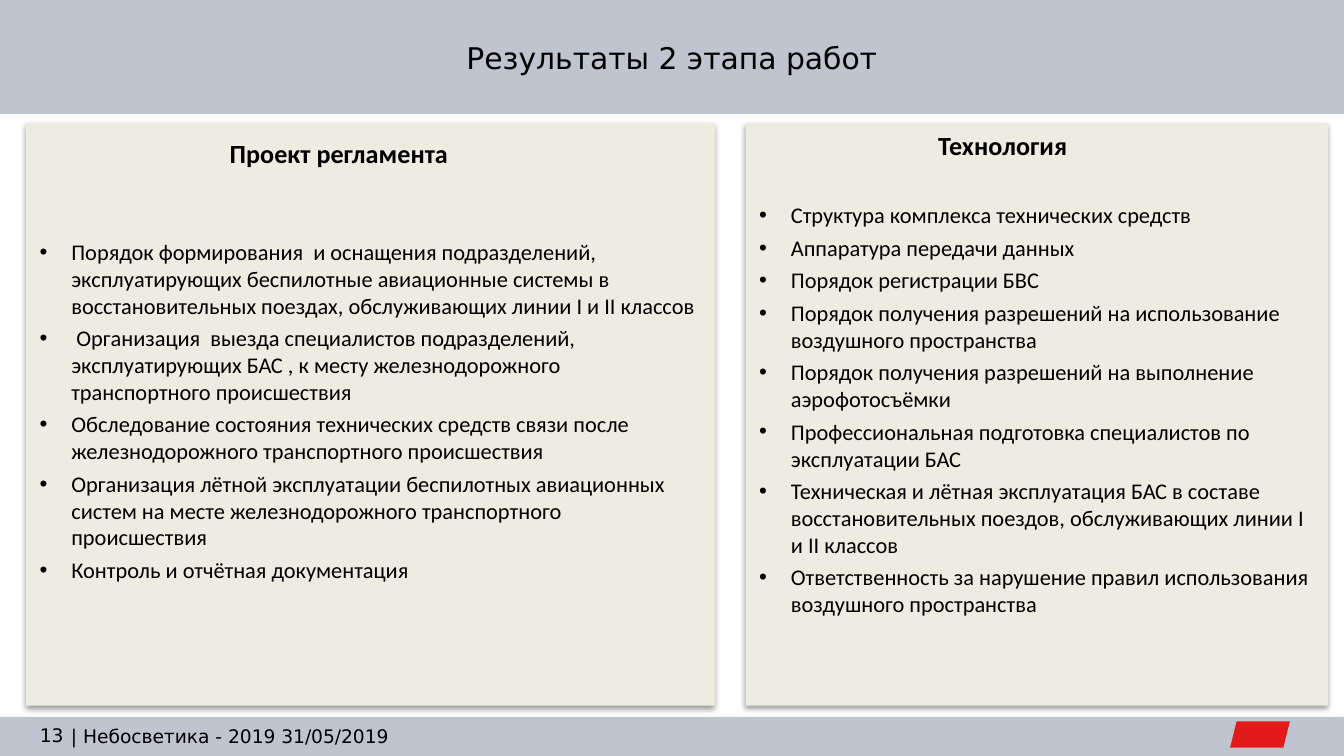
from lxml.etree import SubElement
from pptx import Presentation
from pptx.dml.color import RGBColor
from pptx.enum.shapes import MSO_SHAPE
from pptx.enum.text import MSO_ANCHOR, MSO_AUTO_SIZE, PP_ALIGN
from pptx.oxml.ns import qn
from pptx.util import Pt

COLORS = {
    "band": "BFC5CE",
    "panel": "EEECE1",
    "text": "000000",
    "logo": "E21A1A",
    "band_shadow": "808080",
    "panel_shadow": "000000",
}
SLIDE_WIDTH, SLIDE_HEIGHT = 720, 405
HEADER_FONT, BODY_FONT = "DejaVu Sans", "Calibri"
BULLET_INDENT = 17

REGULATION = [
    "Порядок формирования  и оснащения подразделений, эксплуатирующих беспилотные "
    "авиационные системы в восстановительных поездах, обслуживающих линии I и II классов",
    " Организация  выезда специалистов подразделений, эксплуатирующих БАС , "
    "к месту железнодорожного транспортного происшествия",
    "Обследование состояния технических средств связи после железнодорожного "
    "транспортного происшествия",
    "Организация лётной эксплуатации беспилотных авиационных систем на месте "
    "железнодорожного транспортного происшествия",
    "Контроль и отчётная документация",
]
TECHNOLOGY = [
    "Структура комплекса технических средств",
    "Аппаратура передачи данных",
    "Порядок регистрации БВС",
    "Порядок получения разрешений на использование воздушного пространства",
    "Порядок получения разрешений на выполнение аэрофотосъёмки",
    "Профессиональная подготовка специалистов по эксплуатации БАС",
    "Техническая и лётная эксплуатация БАС в составе восстановительных поездов, "
    "обслуживающих линии I и II классов",
    "Ответственность за нарушение правил использования воздушного пространства",
]


def color(name):
    return RGBColor.from_string(COLORS[name])


def place(shape, left, top, width, height):
    shape.left, shape.top = Pt(left), Pt(top)
    shape.width, shape.height = Pt(width), Pt(height)


def fill_shape(shape, name):
    shape.fill.solid()
    shape.fill.fore_color.rgb = color(name)
    shape.line.fill.background()


def format_runs(paragraph, font, size, bold=False):
    for run in paragraph.runs:
        run.font.name = font
        run.font.size = Pt(size)
        run.font.bold = bold
        run.font.color.rgb = color("text")


def add_shadow(shape, name, opacity, blur, distance):
    """Give the shape a soft shadow that falls straight down."""
    shape.shadow.inherit = False
    effects = shape._element.spPr.find(qn("a:effectLst"))
    shadow = SubElement(effects, qn("a:outerShdw"), blurRad=str(Pt(blur)),
                        dist=str(Pt(distance)), dir="5400000", rotWithShape="0")
    shade = SubElement(shadow, qn("a:srgbClr"), val=COLORS[name])
    SubElement(shade, qn("a:alpha"), val=str(opacity * 1000))


def add_filled(slide, kind, box, name):
    shape = slide.shapes.add_shape(kind, *map(Pt, box))
    fill_shape(shape, name)
    shape.shadow.inherit = False
    return shape


def add_band(slide, box):
    """Add a full-width band behind everything else."""
    band = add_filled(slide, MSO_SHAPE.RECTANGLE, box, "band")
    slide.shapes._spTree.insert(2, band._element)
    return band


def add_label(slide, text, box, font, size, bold=False, inset=0, align=PP_ALIGN.LEFT):
    label = slide.shapes.add_textbox(*map(Pt, box))
    frame = label.text_frame
    frame.margin_left = frame.margin_right = Pt(inset)
    frame.margin_top = frame.margin_bottom = Pt(inset / 2)
    frame.word_wrap = True
    frame.text = text
    frame.paragraphs[0].alignment = align
    format_runs(frame.paragraphs[0], font, size, bold)


def build_header(slide, left, top, width, height):
    add_band(slide, (left, top, width, height))
    title = slide.shapes.title
    place(title, left, top + 1, width, height - 1)
    frame = title.text_frame
    frame.text = "Результаты 2 этапа работ"
    frame.vertical_anchor = MSO_ANCHOR.MIDDLE
    frame.paragraphs[0].alignment = PP_ALIGN.CENTER
    format_runs(frame.paragraphs[0], HEADER_FONT, 16)


def build_footer(slide, left, top, width, height):
    band = add_band(slide, (left, top, width, height))
    add_shadow(band, "band_shadow", 35, 3.1, 1.8)
    add_label(slide, "13", (left + 16, top + 4, 18, 12), HEADER_FONT, 10,
              align=PP_ALIGN.RIGHT)
    add_label(slide, "| Небосветика - 2019 31/05/2019",
              (left + 38, top + 4.5, 361, 12), HEADER_FONT, 10)
    add_filled(slide, MSO_SHAPE.PARALLELOGRAM,
               (left + width - 61, top + 2.5, 32, 14), "logo")


def build_panel(slide, body, box, heading, heading_box, items, list_top):
    """Turn a body placeholder into a panel; inner offsets start at its corner."""
    left, top, width, height = box
    place(body, *box)
    fill_shape(body, "panel")
    add_shadow(body, "panel_shadow", 38, 3.1, 1.6)

    frame = body.text_frame
    frame.auto_size = MSO_AUTO_SIZE.NONE
    frame.vertical_anchor = MSO_ANCHOR.TOP
    frame.margin_top = Pt(list_top)
    frame.text = "\n".join(items)
    for paragraph in frame.paragraphs:
        paragraph.space_before, paragraph.space_after = Pt(0), Pt(3)
        properties = paragraph._p.get_or_add_pPr()
        properties.set("marL", str(Pt(BULLET_INDENT)))
        properties.set("indent", str(-Pt(BULLET_INDENT)))
        format_runs(paragraph, BODY_FONT, 12)

    offset_x, offset_y, heading_width, heading_height = heading_box
    add_label(slide, heading,
              (left + offset_x, top + offset_y, heading_width, heading_height),
              BODY_FONT, 14, bold=True, inset=7.2)


def main():
    presentation = Presentation()
    presentation.slide_width, presentation.slide_height = Pt(SLIDE_WIDTH), Pt(SLIDE_HEIGHT)
    slide = presentation.slides.add_slide(presentation.slide_layouts[3])
    left_body, right_body = slide.placeholders[1], slide.placeholders[2]

    build_header(slide, 0, 0, SLIDE_WIDTH, 61)
    build_panel(slide, left_body, (14, 66, 369, 312), "Проект регламента",
                (102, 4, 153, 24), REGULATION, 61.5)
    build_panel(slide, right_body, (399.5, 66, 312, 312), "Технология",
                (96, 0, 90, 24), TECHNOLOGY, 42)
    build_footer(slide, 0, 384, SLIDE_WIDTH, 21)
    presentation.save("out.pptx")


if __name__ == "__main__":
    main()
